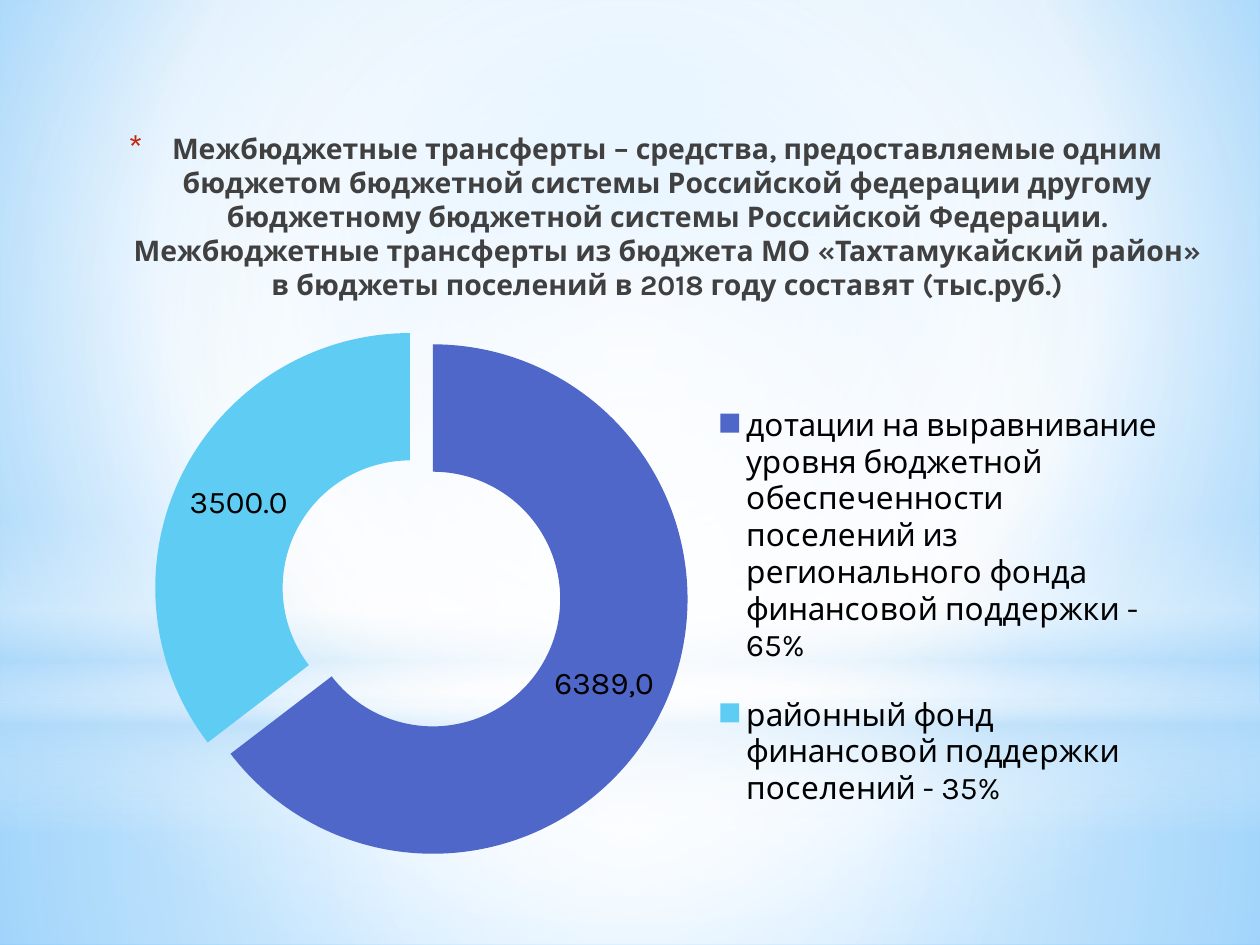
from dataclasses import dataclass

from lxml.etree import SubElement
from pptx import Presentation
from pptx.chart.data import CategoryChartData
from pptx.dml.color import RGBColor
from pptx.enum.chart import XL_CHART_TYPE as ChartType, XL_LEGEND_POSITION as LegendPosition
from pptx.enum.shapes import MSO_SHAPE as Preset
from pptx.enum.text import MSO_ANCHOR as Anchor, MSO_AUTO_SIZE as AutoSize, PP_ALIGN as Align
from pptx.oxml.ns import qn
from pptx.util import Emu, Pt


@dataclass(frozen=True)
class Theme:
    font: str = "Karla"
    title_size: float = 16.2
    chart_size: int = 18
    title: str = "404040"
    text: str = "000000"
    bullet: str = "C3260C"
    white: str = "FFFFFF"
    haze: str = "B4DCFA"
    sky: str = "9ED5FF"
    edge: str = "5BB9FF"
    slices: tuple = ("4E67C8", "5ECCF3")


theme = Theme()
PX = 914400 / 126


def px(*lengths):
    return [Emu(round(length * PX)) for length in lengths]


def paint_gradient(fill, root, stops, focus=None):
    fill.gradient()
    gradient = root.find(".//" + qn("a:gradFill"))
    gradient.clear()
    stop_list = SubElement(gradient, qn("a:gsLst"))
    for position, color, opacity in stops:
        stop = SubElement(stop_list, qn("a:gs"), pos=str(position * 1000))
        rgb = SubElement(stop, qn("a:srgbClr"), val=color)
        if opacity < 100:
            SubElement(rgb, qn("a:alpha"), val=str(opacity * 1000))
    if focus:
        circle = SubElement(gradient, qn("a:path"), path="circle")
        sides = {side: str(inset * 1000) for side, inset in zip("ltrb", focus)}
        SubElement(circle, qn("a:fillToRect"), **sides)
    else:
        SubElement(gradient, qn("a:lin"), ang="5400000", scaled="0")


deck = Presentation()
deck.slide_width, deck.slide_height = px(1260, 945)
page = deck.slides.add_slide(deck.slide_layouts[5])

paint_gradient(
    page.background.fill,
    page.element,
    [(0, theme.sky, 100), (60, theme.white, 100), (100, theme.edge, 100)],
    (20, 10, 20, 60),
)

center = (50, 50, 50, 50)
backdrop = [
    (Preset.RECTANGLE, (0, 703, 1260, 242), center,
     [(0, theme.white, 91), (37, theme.white, 76), (100, theme.haze, 79)]),
    (Preset.RECTANGLE, (0, 0, 1260, 703), center,
     [(0, theme.white, 89), (48, theme.white, 62), (100, theme.haze, 79)]),
    (Preset.RECTANGLE, (0, 519, 1260, 315), None,
     [(0, theme.white, 0), (29, theme.white, 30), (45, theme.haze, 40),
      (55, theme.white, 26), (65, theme.haze, 60), (100, theme.white, 0)]),
    (Preset.OVAL, (0, 221, 1260, 703), center,
     [(0, theme.white, 100), (56, theme.white, 0)]),
]
for preset, bounds, focus, stops in backdrop:
    glow = page.shapes.add_shape(preset, *px(*bounds))
    glow.shadow.inherit = False
    glow.line.fill.background()
    paint_gradient(glow.fill, glow.element, stops, focus)

title = page.shapes.title
title.element.getparent().append(title.element)
title.left, title.top, title.width, title.height = px(74, 125, 1142, 149)
frame = title.text_frame
frame.word_wrap = True
frame.auto_size = AutoSize.NONE
frame.vertical_anchor = Anchor.TOP
para = frame.paragraphs[0]
para.text = (
    "Межбюджетные трансферты – средства, предоставляемые одним бюджетом "
    "бюджетной системы Российской федерации другому бюджетному бюджетной "
    "системы Российской Федерации.\v"
    "Межбюджетные трансферты из бюджета МО «Тахтамукайский район» "
    "в бюджеты поселений в 2018 году составят (тыс.руб.)"
)
para.alignment = Align.CENTER
para.line_spacing = 1.0
for span in para.runs:
    span.font.name = theme.font
    span.font.size = Pt(theme.title_size)
    span.font.bold = True
    span.font.color.rgb = RGBColor.from_string(theme.title)
settings = para._p.get_or_add_pPr()
settings.set("marL", str(px(44)[0]))
settings.set("indent", str(px(-44)[0]))
bullet_color = SubElement(settings, qn("a:buClr"))
SubElement(bullet_color, qn("a:srgbClr"), val=theme.bullet)
SubElement(settings, qn("a:buSzPct"), val="128000")
SubElement(settings, qn("a:buFont"), typeface=theme.font)
SubElement(settings, qn("a:buChar"), char="*")

transfers = CategoryChartData(number_format="0.0")
transfers.categories = [
    "дотации на выравнивание уровня бюджетной обеспеченности поселений "
    "из регионального фонда финансовой поддержки - 65%",
    "районный фонд финансовой поддержки поселений - 35%",
]
transfers.add_series("Series 1", (6389, 3500))
chart_width, chart_height = 1065, 655
chart_frame = page.shapes.add_chart(
    ChartType.DOUGHNUT, *px(115, 275, chart_width, chart_height), transfers
)
chart = chart_frame.chart
chart.has_title = False
chart.font.name = theme.font
chart.font.size = Pt(theme.chart_size)
chart.font.color.rgb = RGBColor.from_string(theme.text)
chart.has_legend = True
chart.legend.position = LegendPosition.RIGHT
chart.legend.include_in_layout = False

plot = chart.plots[0]
plot.vary_by_categories = True
series = plot.series[0]
explosion = SubElement(series._element, qn("c:explosion"), val="10")
series._element.find(qn("c:tx")).addnext(explosion)
for index, color in enumerate(theme.slices):
    fill = series.points[index].format.fill
    fill.solid()
    fill.fore_color.rgb = RGBColor.from_string(color)

labels = series.data_labels
labels.show_value = True
labels.show_percentage = False
labels.show_legend_key = False
labels.number_format = "0.0"
labels.number_format_is_linked = False
label_frame = series.points[0].data_label.text_frame
label_frame.text = "6389,0"
label_font = label_frame.paragraphs[0].runs[0].font
label_font.name = theme.font
label_font.size = Pt(theme.chart_size)
label_font.color.rgb = RGBColor.from_string(theme.text)

plot_area = chart._chartSpace.find(".//" + qn("c:plotArea"))
legend = chart.legend._element
chart_parts = [
    (plot_area, 0, [("layoutTarget", "inner")], (12, 51, 589, 535)),
    (legend, 1, [], (600, 100, 448, 465)),
]
for part, position, target, (left, top, width, height) in chart_parts:
    for old_layout in part.findall(qn("c:layout")):
        part.remove(old_layout)
    layout = SubElement(part, qn("c:layout"))
    part.insert(position, layout)
    manual = SubElement(layout, qn("c:manualLayout"))
    placement = target + [
        ("xMode", "edge"), ("yMode", "edge"),
        ("x", left / chart_width), ("y", top / chart_height),
        ("w", width / chart_width), ("h", height / chart_height),
    ]
    for name, value in placement:
        SubElement(manual, qn("c:" + name), val=str(value))

deck.save("out.pptx")
